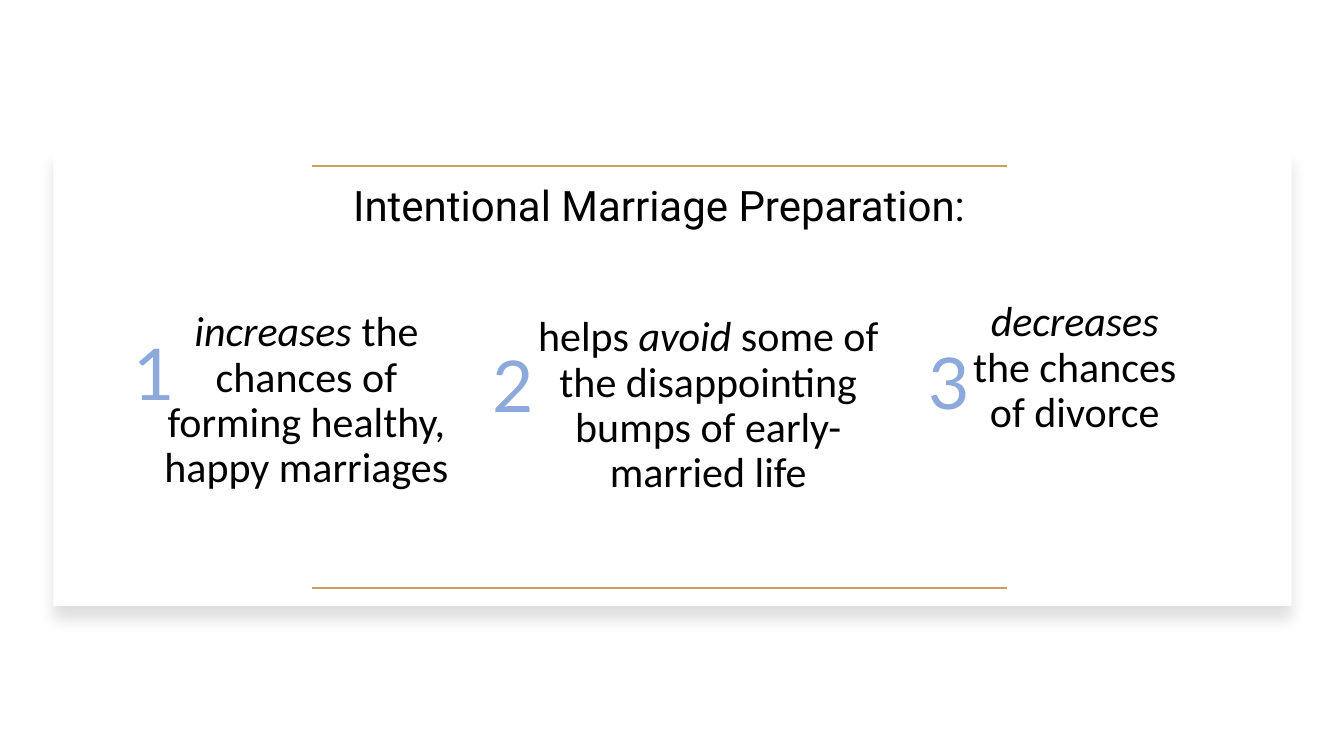
"""Build the Intentional Marriage Preparation slide with three numbered benefits."""
from dataclasses import dataclass

from pptx import Presentation
from pptx import util as u
from pptx.dml.color import RGBColor
from pptx.enum import shapes, text
from pptx.oxml import parse_xml
from pptx.oxml.ns import nsdecls

Box = tuple[float, float, float, float]
Run = tuple[str, bool]


@dataclass(frozen=True)
class Theme:
    """Colours, fonts and type sizes of the slide."""
    card: str = "FFFFFF"
    ink: str = "000000"
    gold: str = "D09D5C"
    blue: str = "8DA9DB"
    title_font: str = "Roboto"
    body_font: str = "Calibri"
    number_font: str = "Lato"
    body_size: int = 30
    number_size: int = 51
    rule_width: float = 1.5


@dataclass(frozen=True)
class Style:
    """Format values of a text box."""
    font: str
    size: int
    colour: str
    frame: dict
    paragraph: dict


@dataclass(frozen=True)
class Benefit:
    """A numbered statement with its two boxes."""
    number_at: tuple[float, float]
    box: Box
    runs: tuple[Run, ...]


THEME = Theme()
CARD: Box = (0.53, 1.49, 12.28, 4.52)
TITLE: Box = (3.09, 1.65, 6.9, 0.69)
RULE_TOPS = (1.65, 5.83)
NUMBER_SIZE = (0.51, 1.06)

CENTRED_FRAME = {"word_wrap": True, "vertical_anchor": text.MSO_ANCHOR.BOTTOM}
CENTRED_PARAGRAPH = {"alignment": text.PP_ALIGN.CENTER, "line_spacing": 0.9}
NUMBER_FRAME = {
    "word_wrap": True,
    "auto_size": text.MSO_AUTO_SIZE.SHAPE_TO_FIT_TEXT,
    "margin_top": u.Inches(0.1),
    "margin_bottom": u.Inches(0.1),
}
TITLE_STYLE = Style(THEME.title_font, THEME.body_size, THEME.ink, CENTRED_FRAME, CENTRED_PARAGRAPH)
BODY_STYLE = Style(THEME.body_font, THEME.body_size, THEME.ink, CENTRED_FRAME, CENTRED_PARAGRAPH)
NUMBER_STYLE = Style(THEME.number_font, THEME.number_size, THEME.blue, NUMBER_FRAME, {})

BENEFITS = (
    Benefit((1.23, 3.17), (1.49, 2.92, 3.1, 2.01),
            (("increases", True), (" the chances of forming healthy, happy marriages", False))),
    Benefit((4.79, 3.28), (5.14, 2.66, 3.77, 2.32),
            (("helps", False), (" avoid", True),
             (" some of the disappointing bumps of early-married life", False))),
    Benefit((9.11, 3.25), (9.47, 3.01, 2.38, 1.37),
            (("decreases", True), (" the chances of divorce", False))),
)


def apply(target: object, values: dict) -> None:
    """Set each format value on the target."""
    for name, value in values.items():
        setattr(target, name, value)


def add_text(parent, box: Box, runs: tuple[Run, ...], style: Style) -> None:
    """Add a one-paragraph text box made of plain and italic runs."""
    tf = parent.add_textbox(*map(u.Inches, box)).text_frame
    apply(tf, style.frame)
    p = tf.paragraphs[0]
    apply(p, style.paragraph)
    for words, italic in runs:
        r = p.add_run()
        r.text = words
        apply(r.font, {"name": style.font, "size": u.Pt(style.size), "italic": italic})
        r.font.color.rgb = RGBColor.from_string(style.colour)


def add_card(parent, box: Box) -> None:
    """Add the white card with a soft shadow below it."""
    sp = parent.add_shape(shapes.MSO_SHAPE.RECTANGLE, *map(u.Inches, box))
    sp.fill.solid()
    sp.fill.fore_color.rgb = RGBColor.from_string(THEME.card)
    sp.line.fill.background()
    sp.shadow.inherit = False
    sp._element.spPr.find("{*}effectLst").append(parse_xml(
        f'<a:outerShdw {nsdecls("a")} blurRad="{u.Pt(11)}" dist="{u.Pt(10)}" dir="5400000" '
        f'algn="t" rotWithShape="0"><a:srgbClr val="{THEME.ink}"><a:alpha val="13000"/>'
        '</a:srgbClr></a:outerShdw>'))


def add_rule(parent, left: float, top: float, width: float) -> None:
    """Add a gold horizontal rule."""
    ends = map(u.Inches, (left, top, left + width, top))
    sp = parent.add_connector(shapes.MSO_CONNECTOR.STRAIGHT, *ends)
    sp.line.color.rgb = RGBColor.from_string(THEME.gold)
    sp.line.width = u.Pt(THEME.rule_width)
    sp._element.spPr.append(parse_xml(f'<a:effectLst {nsdecls("a")}/>'))


def add_benefit(parent, number: int, benefit: Benefit) -> None:
    """Add a grouped statement and its number."""
    group = parent.add_group_shape().shapes
    add_text(group, benefit.box, benefit.runs, BODY_STYLE)
    add_text(group, benefit.number_at + NUMBER_SIZE, ((str(number), False),), NUMBER_STYLE)


def main() -> None:
    """Build and save the slide."""
    prs = Presentation()
    apply(prs, {"slide_width": u.Inches(13.33), "slide_height": u.Inches(7.5)})
    s = prs.slides.add_slide(prs.slide_layouts[6])
    add_card(s.shapes, CARD)
    add_text(s.shapes, TITLE, (("Intentional Marriage Preparation:", False),), TITLE_STYLE)
    for top in RULE_TOPS:
        add_rule(s.shapes, TITLE[0], top, TITLE[2])
    for number, benefit in enumerate(BENEFITS, 1):
        add_benefit(s.shapes, number, benefit)
    prs.save("out.pptx")


if __name__ == "__main__":
    main()
